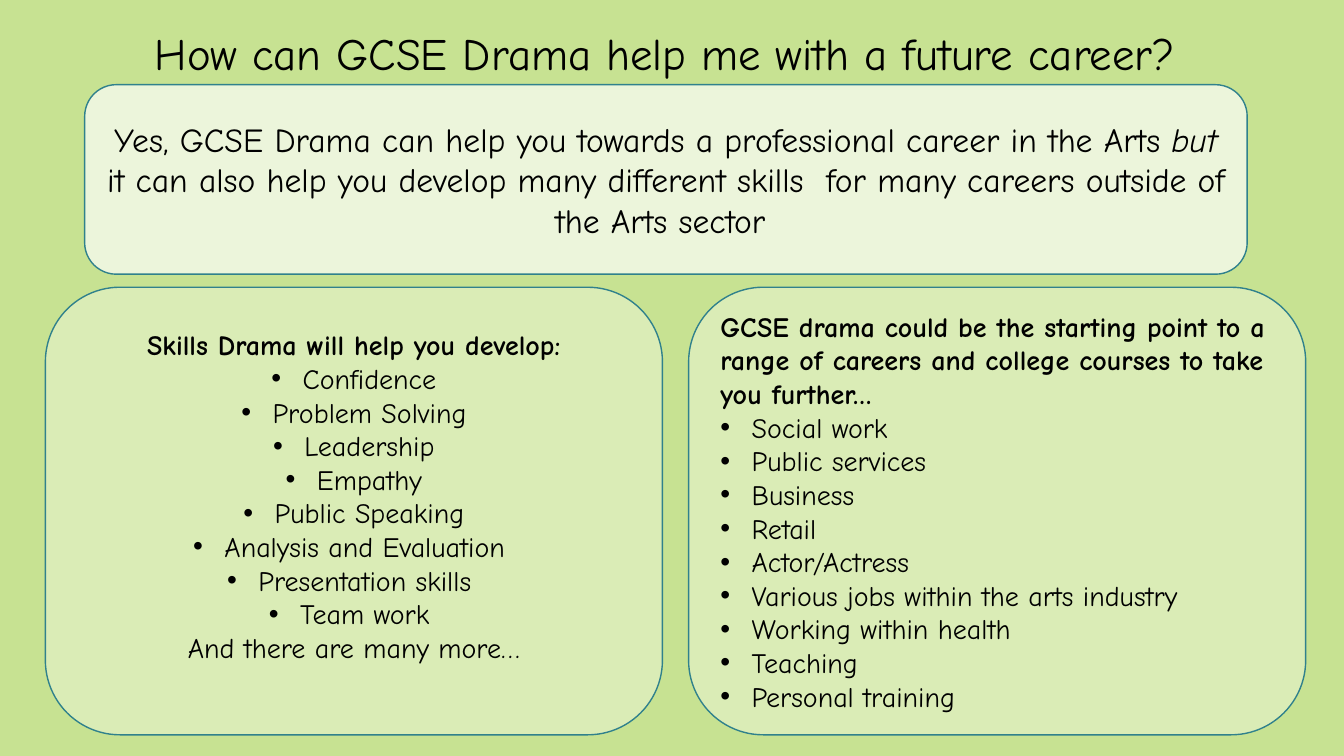
from lxml import etree
from pptx import Presentation
from pptx.dml.color import RGBColor
from pptx.enum import shapes, text
from pptx.oxml import ns
from pptx.util import Inches, Pt

SKILLS = ["Confidence", "Problem Solving", "Leadership", "Empathy", "Public Speaking",
          "Analysis and Evaluation ", "Presentation skills ", "Team work "]
CAREERS = ["Social work", "Public services", "Business", "Retail", "Actor/Actress",
           "Various jobs within the arts industry", "Working within health",
           "Teaching", "Personal training"]


def rgb(value):
    return RGBColor.from_string(value)


class CareerSlide:
    FONT, INK, LINE = "Comic Neue", "000000", "30818C"
    BACKGROUND, BANNER, PANEL = "C7E292", "ECF5DB", "DAECB6"
    CENTER, LEFT = text.PP_ALIGN.CENTER, text.PP_ALIGN.LEFT

    def __init__(self, prs):
        self.s = prs.slides.add_slide(prs.slide_layouts[5])
        fill = self.s.background.fill
        fill.solid()
        fill.fore_color.rgb = rgb(self.BACKGROUND)

    def run(self, p, words, size, bold=False, italic=False):
        r = p.add_run()
        r.text = words
        r.font.name, r.font.size = self.FONT, Pt(size)
        r.font.bold, r.font.italic = bold, italic
        r.font.color.rgb = rgb(self.INK)

    def title(self, words, x, y, w, h):
        sp = self.s.shapes.title
        sp.left, sp.top, sp.width, sp.height = map(Inches, (x, y, w, h))
        tf = sp.text_frame
        tf.word_wrap = True
        tf.auto_size = text.MSO_AUTO_SIZE.SHAPE_TO_FIT_TEXT
        tf.vertical_anchor = text.MSO_ANCHOR.TOP
        p = tf.paragraphs[0]
        p.alignment = self.CENTER
        self.run(p, words, 32)

    def box(self, x, y, w, h, fill):
        """Draw a rounded box and return its text frame."""
        sp = self.s.shapes.add_shape(shapes.MSO_SHAPE.ROUNDED_RECTANGLE,
                                     *map(Inches, (x, y, w, h)))
        sp.shadow.inherit = False
        sp.fill.solid()
        sp.fill.fore_color.rgb = rgb(fill)
        sp.line.color.rgb = rgb(self.LINE)
        sp.line.width = Pt(1)
        tf = sp.text_frame
        tf.word_wrap = True
        tf.vertical_anchor = text.MSO_ANCHOR.MIDDLE
        return tf

    def bullet(self, p):
        pPr = p._p.get_or_add_pPr()
        pPr.set("marL", str(Inches(0.31)))
        pPr.set("indent", str(-Inches(0.31)))
        etree.SubElement(pPr, ns.qn("a:buFont"), typeface="Arial")
        etree.SubElement(pPr, ns.qn("a:buChar"), char="•")

    def panel(self, x, heading, items, align, closing=None):
        """Draw a box with a bold heading, a bulleted list and an optional last line."""
        tf = self.box(x, 2.85, 6.12, 4.44, self.PANEL)
        p = tf.paragraphs[0]
        p.alignment = align
        self.run(p, heading, 20, bold=True)
        for item in items:
            p = tf.add_paragraph()
            p.alignment = align
            self.bullet(p)
            self.run(p, item, 20)
        if closing:
            p = tf.add_paragraph()
            p.alignment = align
            self.run(p, closing, 20)
        return tf


def main():
    prs = Presentation()
    prs.slide_width, prs.slide_height = Inches(13.33), Inches(7.5)
    slide = CareerSlide(prs)
    slide.title("How can GCSE Drama help me with a future career?", 0.63, 0.21, 11.94, 0.64)

    p = slide.box(0.84, 0.84, 11.53, 1.88, slide.BANNER).paragraphs[0]
    p.alignment = slide.CENTER
    slide.run(p, "Yes, GCSE Drama can help you towards a professional career in the Arts ", 24)
    slide.run(p, "but", 24, italic=True)
    slide.run(p, " it can also help you develop many different skills  for many careers "
                 "outside of the Arts sector ", 24)

    skills = slide.panel(0.45, "Skills Drama will help you develop:", SKILLS,
                         slide.CENTER, "And there are many more…")
    skills.margin_bottom = Inches(0.35)
    slide.panel(6.83, "GCSE drama could be the starting point to a range of careers "
                      "and college courses to take you further…", CAREERS, slide.LEFT)
    prs.save("out.pptx")


if __name__ == "__main__":
    main()
